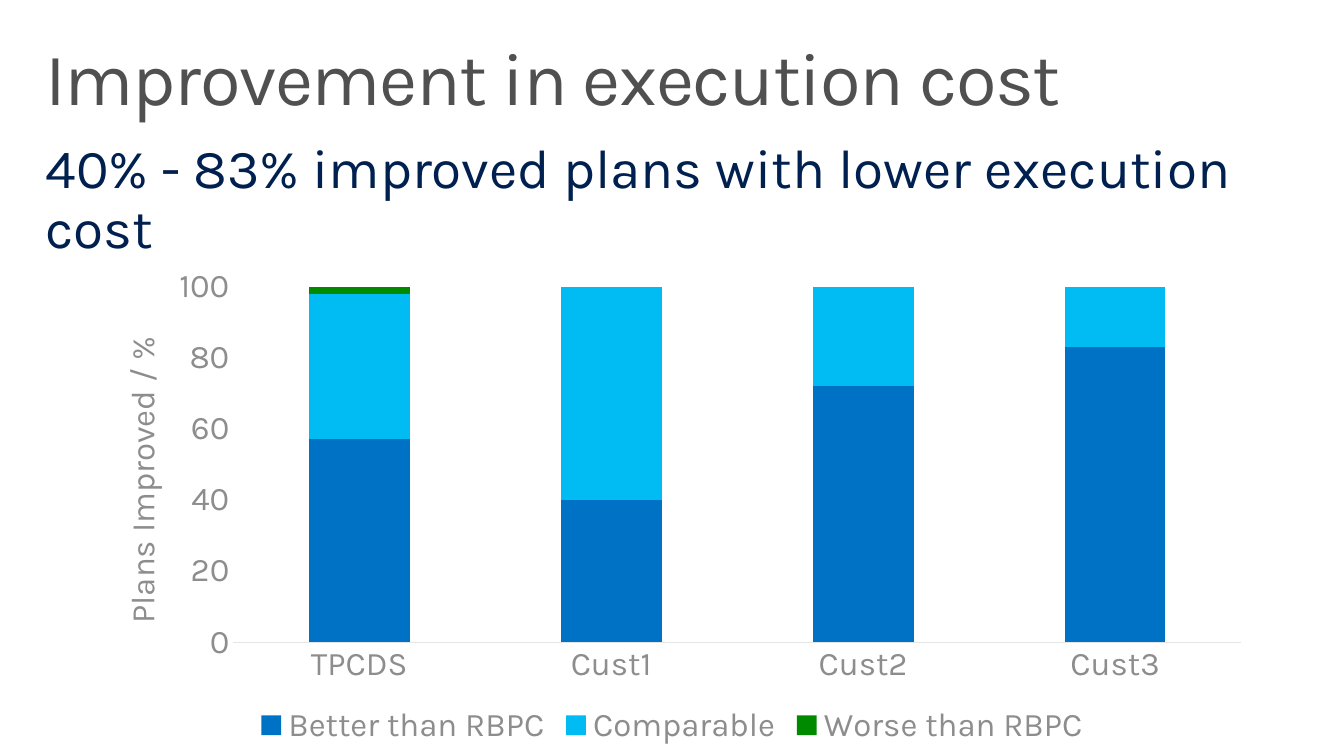
"""Build the slide on improvement in execution cost with its stacked column chart."""
from lxml import etree
from pptx import Presentation
from pptx.chart.data import CategoryChartData
from pptx.dml.color import RGBColor
from pptx.enum import chart as ch, text as tx
from pptx.oxml import ns
from pptx.util import Pt

SLIDE = (979.2, 550.8)
FONT = "Karla"
GREY = "8D8D8D"
HEADING = "Improvement in execution cost"
HEADING_BOX = (21.6, 23, 936, 72)
CLAIM = "40% - 83% improved plans with lower execution cost"
CLAIM_BOX = (21.6, 95.8, 936, 58.3)
CHART_BOX = (57.6, 187.2, 864, 360)
AXIS_LABEL = "Plans Improved / %"
WORKLOADS = ["TPCDS", "Cust1", "Cust2", "Cust3"]
OUTCOMES = [
    ("Better than RBPC", "0072C6", (57, 40, 72, 83)),
    ("Comparable", "00BCF2", (41, 60, 28, 17)),
    ("Worse than RBPC", "008A00", (2, 0, 0, 0)),
]
PLOT_LAYOUT = {"layoutTarget": "inner", "xMode": "edge", "yMode": "edge",
               "x": 0.13, "y": 0.06, "w": 0.85, "h": 0.72}
LABEL_LAYOUT = {"xMode": "edge", "yMode": "edge", "x": 0.03, "y": 0.15}


def rgb(code):
    return RGBColor.from_string(code)


def style(font, size, color):
    font.name, font.size, font.bold = FONT, Pt(size), False
    font.color.rgb = rgb(color)


def write(holder, words, box, size, color, spacing=None, autosize=tx.MSO_AUTO_SIZE.NONE):
    holder.left, holder.top, holder.width, holder.height = map(Pt, box)
    frame = holder.text_frame
    frame.text = words
    frame.word_wrap, frame.auto_size = True, autosize
    frame.vertical_anchor = tx.MSO_ANCHOR.TOP
    frame.margin_left = frame.margin_right = Pt(11.5)
    frame.margin_top = frame.margin_bottom = Pt(7.2)
    line = frame.paragraphs[0]
    line.alignment, line.line_spacing, line.space_before = tx.PP_ALIGN.LEFT, 0.9, Pt(0)
    props = line._p.get_or_add_pPr()
    props.set("marL", "0")
    props.set("indent", "0")
    etree.SubElement(props, ns.qn("a:buNone"))
    run = line.runs[0]
    style(run.font, size, color)
    if spacing is not None:
        run.font._element.set("spc", str(spacing * 100))


def place(part, settings):
    layout = part.find(ns.qn("c:layout"))
    if layout is None:
        layout = etree.Element(ns.qn("c:layout"))
        words = part.find(ns.qn("c:tx"))
        if words is None:
            part.insert(0, layout)
        else:
            words.addnext(layout)
    manual = etree.SubElement(layout, ns.qn("c:manualLayout"))
    for key, value in settings.items():
        etree.SubElement(manual, ns.qn("c:" + key)).set("val", str(value))


def add_outcomes(slide):
    data = CategoryChartData(number_format="General")
    data.categories = WORKLOADS
    for name, _, shares in OUTCOMES:
        data.add_series(name, shares)
    chart = slide.shapes.add_chart(
        ch.XL_CHART_TYPE.COLUMN_STACKED, *map(Pt, CHART_BOX), data).chart
    style(chart.font, 24, "505050")
    chart.has_title = False
    plot = chart.plots[0]
    plot.gap_width, plot.overlap, plot.vary_by_categories = 150, 100, False
    for series, (_, color, _) in zip(plot.series, OUTCOMES):
        series.format.fill.solid()
        series.format.fill.fore_color.rgb = rgb(color)

    for axis in (chart.category_axis, chart.value_axis):
        axis.major_tick_mark = axis.minor_tick_mark = ch.XL_TICK_MARK.NONE
        axis.has_major_gridlines = False
        style(axis.tick_labels.font, 24, GREY)
    baseline = chart.category_axis.format.line
    baseline.color.rgb, baseline.width = rgb("E5E5E5"), Pt(0.75)
    percent = chart.value_axis
    percent.format.line.fill.background()
    percent.minimum_scale, percent.maximum_scale, percent.major_unit = 0, 100, 20
    label = percent.axis_title
    label.text_frame.text = AXIS_LABEL
    style(label.text_frame.paragraphs[0].runs[0].font, 24, GREY)
    label.text_frame._txBody.bodyPr.set("rot", "-5400000")
    label.text_frame._txBody.bodyPr.set("vert", "horz")

    chart.has_legend = True
    chart.legend.position = ch.XL_LEGEND_POSITION.BOTTOM
    chart.legend.include_in_layout = False
    style(chart.legend.font, 24, GREY)
    place(chart._chartSpace.chart.plotArea, PLOT_LAYOUT)
    place(label._element, LABEL_LAYOUT)


def main():
    deck = Presentation()
    deck.slide_width, deck.slide_height = map(Pt, SLIDE)
    slide = deck.slides.add_slide(deck.slide_layouts[1])
    heading, claim = slide.placeholders
    write(heading, HEADING, HEADING_BOX, 54, "505050", spacing=-1)
    write(claim, CLAIM, CLAIM_BOX, 40, "002050",
          autosize=tx.MSO_AUTO_SIZE.SHAPE_TO_FIT_TEXT)
    add_outcomes(slide)
    deck.save("out.pptx")


if __name__ == "__main__":
    main()
